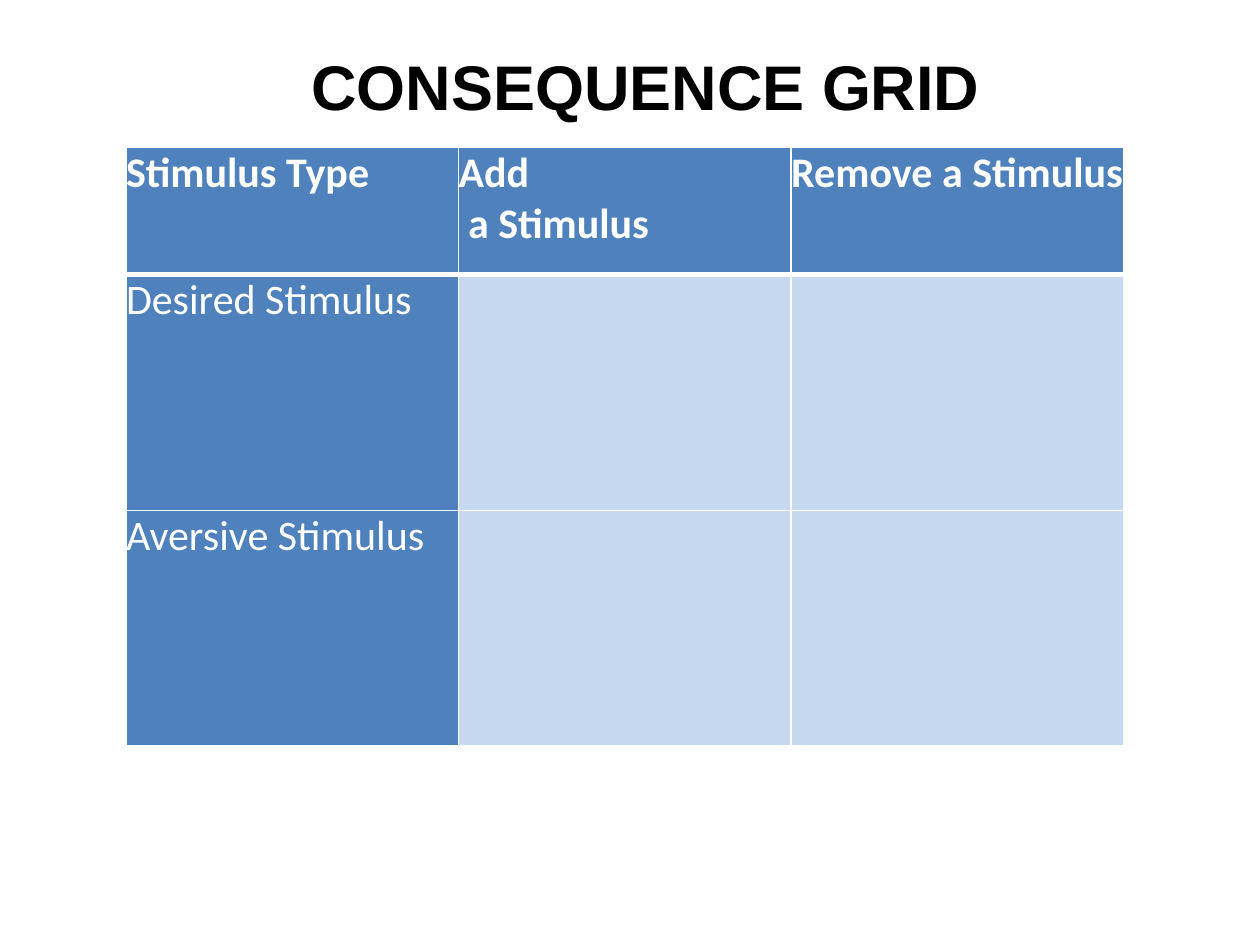
from lxml.etree import SubElement
from pptx import Presentation
from pptx.dml.color import RGBColor
from pptx.enum.text import MSO_ANCHOR, MSO_AUTO_SIZE, PP_ALIGN
from pptx.oxml.ns import qn
from pptx.util import Inches, Pt

TITLE = "CONSEQUENCE GRID"
ROWS = [
    ["Stimulus Type", "Add\n a Stimulus", "Remove a Stimulus"],
    ["Desired Stimulus", "", ""],
    ["Aversive Stimulus", "", ""],
]
COLUMN_WIDTH = 2.64
ROW_HEIGHTS = [1.01, 1.87, 1.87]
TABLE_LEFT, TABLE_TOP = 1, 1.17
BLUE, PALE, WHITE, BLACK = "4F81BD", "C6D9F1", "FFFFFF", "000000"
TITLE_BOX = {"left": Inches(1.5), "top": Inches(0.33), "width": Inches(7.25), "height": Inches(0.71)}
TITLE_FRAME = {"word_wrap": True, "auto_size": MSO_AUTO_SIZE.NONE, "vertical_anchor": MSO_ANCHOR.TOP}
TITLE_FONT = {"name": "Arial", "size": Pt(36), "bold": True}
CELL_FORMAT = {"margin_left": 0, "margin_top": 0, "margin_right": 0, "margin_bottom": 0}
CELL_FONT = {"name": "Calibri", "size": Pt(24)}


def apply(target, values):
    """Set each named attribute on the target."""
    for name, value in values.items():
        setattr(target, name, value)


def paint(color_format, color):
    """Give a colour format its hex colour."""
    color_format.rgb = RGBColor.from_string(color)


def add_borders(cell, widths):
    """Draw white cell borders, placed before the fill as the schema asks."""
    properties = cell._tc.get_or_add_tcPr()
    for position, (side, width) in enumerate(widths.items()):
        line = SubElement(properties, qn(f"a:ln{side}"), w=str(Pt(width)))
        SubElement(SubElement(line, qn("a:solidFill")), qn("a:srgbClr"), val=WHITE)
        properties.insert(position, line)


def add_title(slide):
    """Place and format the title."""
    title = slide.shapes.title
    apply(title, TITLE_BOX)
    apply(title.text_frame, TITLE_FRAME)
    title.text_frame.text = TITLE
    paragraph = title.text_frame.paragraphs[0]
    paragraph.alignment = PP_ALIGN.CENTER
    apply(paragraph.font, TITLE_FONT)
    paint(paragraph.font.color, BLACK)


def fill_cell(cell, text, row, column):
    """Write and format one cell of the grid."""
    is_header = row == 0
    apply(cell, CELL_FORMAT)
    cell.text = text
    cell.fill.solid()
    paint(cell.fill.fore_color, BLUE if is_header or column == 0 else PALE)
    for paragraph in cell.text_frame.paragraphs:
        apply(paragraph.font, {**CELL_FONT, "bold": is_header})
        paint(paragraph.font.color, WHITE)
    add_borders(cell, {"L": 1, "R": 1, "T": 3 if row == 1 else 1, "B": 3 if is_header else 1})


def add_grid(slide):
    """Add the table of stimulus types and consequences."""
    column_count = len(ROWS[0])
    table = slide.shapes.add_table(
        len(ROWS), column_count, Inches(TABLE_LEFT), Inches(TABLE_TOP),
        Inches(COLUMN_WIDTH * column_count), Inches(sum(ROW_HEIGHTS)),
    ).table
    for column in table.columns:
        column.width = Inches(COLUMN_WIDTH)
    for row, (texts, height) in enumerate(zip(ROWS, ROW_HEIGHTS)):
        table.rows[row].height = Inches(height)
        for column, text in enumerate(texts):
            fill_cell(table.cell(row, column), text, row, column)


def main():
    """Build the consequence grid slide."""
    presentation = Presentation()
    apply(presentation, {"slide_width": Inches(10), "slide_height": Inches(7.5)})
    slide = presentation.slides.add_slide(presentation.slide_layouts[5])
    add_title(slide)
    add_grid(slide)
    presentation.save("out.pptx")


if __name__ == "__main__":
    main()
